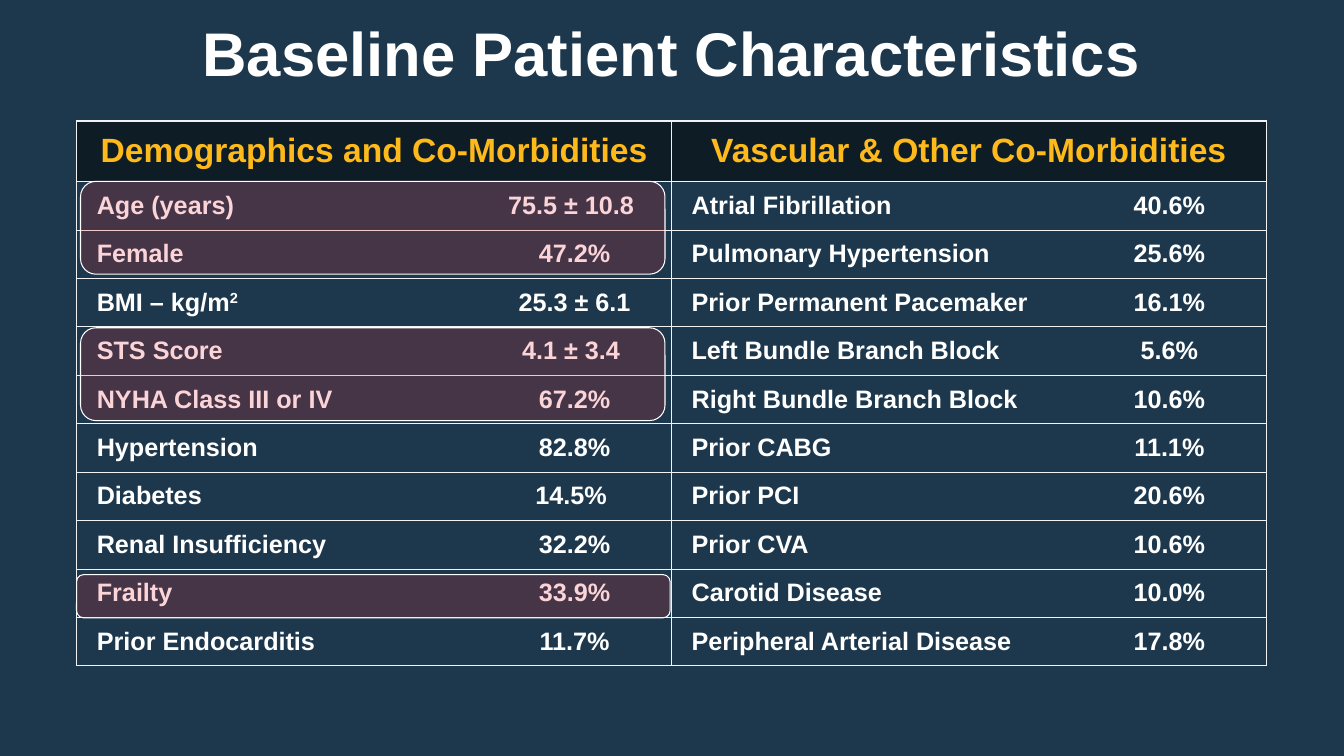
from pptx import Presentation
from pptx.dml.color import RGBColor
from pptx.enum.shapes import MSO_SHAPE
from pptx.enum.text import MSO_ANCHOR, PP_ALIGN
from pptx.oxml import parse_xml
from pptx.oxml.ns import nsdecls
from pptx.util import Cm, Pt

# Content
TITLE = "Baseline Patient Characteristics"
HEADERS = ["Demographics and Co-Morbidities", "Vascular & Other Co-Morbidities"]
SUPERSCRIPT = {"BMI – kg/m": "2"}
ROWS = [
    ("Age (years)", "75.5 ± 10.8 ", "Atrial Fibrillation", "40.6%"),
    ("Female", "47.2%", "Pulmonary Hypertension", "25.6%"),
    ("BMI – kg/m", "25.3 ± 6.1", "Prior Permanent Pacemaker", "16.1%"),
    ("STS Score", "4.1 ± 3.4 ", "Left Bundle Branch Block", "5.6%"),
    ("NYHA Class III or IV", "67.2%", "Right Bundle Branch Block", "10.6%"),
    ("Hypertension", "82.8%", "Prior CABG", "11.1%"),
    ("Diabetes", "14.5% ", "Prior PCI", "20.6%"),
    ("Renal Insufficiency", "32.2%", "Prior CVA", "10.6%"),
    ("Frailty", "33.9%", "Carotid Disease", "10.0%"),
    ("Prior Endocarditis", "11.7%", "Peripheral Arterial Disease", "17.8%"),
]

# Layout in centimetres
TABLE_LEFT, TABLE_TOP = 1.93, 3.05
COL_WIDTHS = [10.11, 4.88] * 2
HEAD_HEIGHT, ROW_HEIGHT = 1.52, 1.22
HIGHLIGHTS = [  # left, top, width, height
    (2.03, 4.57, 14.73, 2.34),
    (2.03, 8.26, 14.73, 2.34),
    (1.93, 14.48, 14.96, 1.09),
]

# Formats
NAVY, DARK, RED, GRID = "1D384C", "0E1C26", "ED2937", "F2F2F2"
TITLE_FONT = {"size": 44, "color": "FFFFFF"}
HEAD_FONT = {"size": 24, "color": "FEB91A"}
BODY_FONT = {"size": 18, "color": "FFFFFF"}
HEAD_CELL = {"margin_left": Cm(0.25), "margin_right": Cm(0.25)}
BODY_CELL = {"margin_left": Cm(0.51), "margin_right": Cm(0.51)}
CELL = {"margin_top": Cm(0.13), "margin_bottom": Cm(0.13),
        "vertical_anchor": MSO_ANCHOR.MIDDLE}


def rgb(hex_color):
    return RGBColor.from_string(hex_color)


def set_attrs(obj, values):
    for name, value in values.items():
        setattr(obj, name, value)


def paint(fill, color):
    fill.solid()
    fill.fore_color.rgb = rgb(color)


def add_run(p, text, font):
    r = p.add_run()
    r.text = text
    set_attrs(r.font, {"name": "Arial", "bold": True, "size": Pt(font["size"])})
    r.font.color.rgb = rgb(font["color"])
    return r


def set_borders(cell, widths):
    """Draw left, right, top and bottom borders; a width of 0 hides one."""
    tc_pr = cell._tc.get_or_add_tcPr()
    for i, (side, width) in enumerate(zip("LRTB", widths)):
        fill = f'<a:solidFill><a:srgbClr val="{GRID}"/></a:solidFill>' if width else "<a:noFill/>"
        tc_pr.insert(i, parse_xml(
            f'<a:ln{side} {nsdecls("a")} w="{int(Pt(width))}">{fill}</a:ln{side}>'))


def fill_cell(cell, text, font, margins, color, align, borders):
    set_attrs(cell, {**CELL, **margins})
    paint(cell.fill, color)
    p = cell.text_frame.paragraphs[0]
    p.alignment = align
    add_run(p, text, font)
    if text in SUPERSCRIPT:
        r = add_run(p, SUPERSCRIPT[text], font)
        r.font._element.set("baseline", "30000")
    set_borders(cell, borders)


def add_title(s):
    tf = s.shapes.add_textbox(Cm(2.54), Cm(0.25), Cm(28.78), Cm(2.11)).text_frame
    margins = {f"margin_{side}": Cm(0.13) for side in ("left", "right", "top", "bottom")}
    set_attrs(tf, {**margins, "word_wrap": True, "vertical_anchor": MSO_ANCHOR.BOTTOM})
    p = tf.paragraphs[0]
    p.alignment = PP_ALIGN.CENTER
    add_run(p, TITLE, TITLE_FONT)


def add_characteristics(s):
    height = HEAD_HEIGHT + ROW_HEIGHT * len(ROWS)
    table = s.shapes.add_table(len(ROWS) + 1, len(COL_WIDTHS), Cm(TABLE_LEFT), Cm(TABLE_TOP),
                               Cm(sum(COL_WIDTHS)), Cm(height)).table
    table.horz_banding = False
    for col, width in zip(table.columns, COL_WIDTHS):
        col.width = Cm(width)
    for i, row in enumerate(table.rows):
        row.height = Cm(ROW_HEIGHT if i else HEAD_HEIGHT)

    # Each heading spans a label column and a value column
    for i, text in enumerate(HEADERS):
        cell = table.cell(0, 2 * i)
        cell.merge(table.cell(0, 2 * i + 1))
        fill_cell(cell, text, HEAD_FONT, HEAD_CELL, DARK, PP_ALIGN.CENTER, (1, 1, 1, 1))
        set_borders(table.cell(0, 2 * i + 1), (0, 1, 1, 1))

    # Thin lines between rows, full lines around each half
    for i, row in enumerate(ROWS, 1):
        top = 1 if i == 1 else 0.25
        bottom = 1 if i == len(ROWS) else 0.25
        for j, text in enumerate(row):
            is_value = j % 2
            align = PP_ALIGN.CENTER if is_value else PP_ALIGN.LEFT
            sides = (0, 1) if is_value else (1, 0)
            fill_cell(table.cell(i, j), text, BODY_FONT, BODY_CELL, NAVY, align,
                      (*sides, top, bottom))


def add_highlight(s, box):
    sp = s.shapes.add_shape(MSO_SHAPE.ROUNDED_RECTANGLE, *map(Cm, box))
    sp.shadow.inherit = False
    paint(sp.fill, RED)
    color = sp.fill._xPr.solidFill.srgbClr
    color.append(parse_xml(f'<a:alpha {nsdecls("a")} val="20000"/>'))
    sp.line.color.rgb = rgb("FFFFFF")
    sp.line.width = Pt(0.75)


def main():
    prs = Presentation()
    prs.slide_width, prs.slide_height = Cm(33.87), Cm(19.05)
    s = prs.slides.add_slide(prs.slide_layouts[6])
    paint(s.background.fill, NAVY)
    add_characteristics(s)
    add_title(s)
    for box in HIGHLIGHTS:
        add_highlight(s, box)
    prs.save("out.pptx")


if __name__ == "__main__":
    main()
